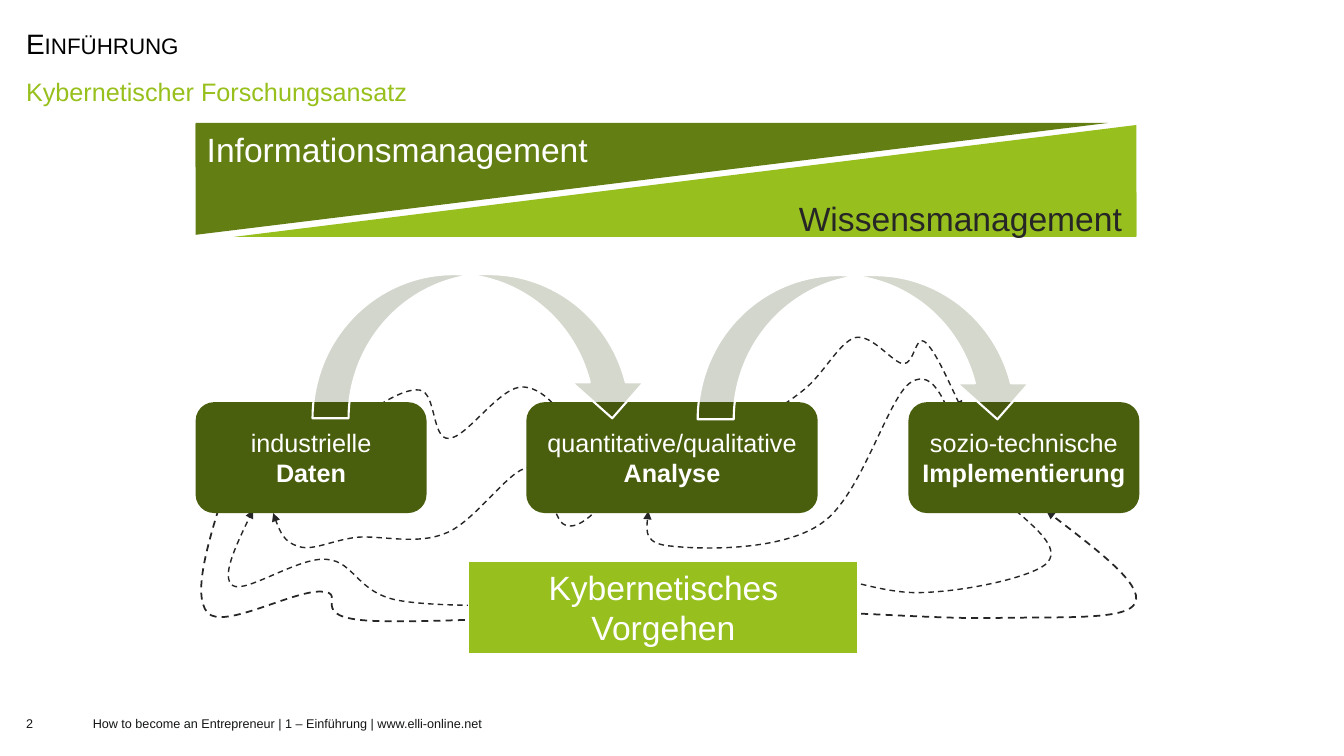
from lxml import etree
from pptx import Presentation
from pptx import util as u
from pptx.dml.color import RGBColor
from pptx.enum import dml, shapes, text
from pptx.oxml.ns import qn

HUE = {
    "white": "FFFFFF", "black": "000000", "foot": "141616", "ink": "262626",
    "lead": "98C01C", "lime": "97C01E", "olive": "637F13",
    "moss": "4A5F0E", "arc": "314009",
}
KIND = shapes.MSO_SHAPE
MID = text.MSO_ANCHOR.MIDDLE
TOP = text.MSO_ANCHOR.TOP
LEFT = text.PP_ALIGN.LEFT
CENTER = text.PP_ALIGN.CENTER

LOOPS = [
    (1.25, [(2.24, 4.82), (2.07, 5.36), (1.9, 5.9), (2.06, 6.08),
            (2.22, 6.25), (2.92, 5.85), (3.19, 5.87),
            (3.47, 5.88), (3.01, 6.13), (3.7, 6.16),
            (4.38, 6.19), (6.27, 6.06), (7.3, 6.06),
            (8.34, 6.05), (9.27, 6.15), (9.93, 6.13),
            (10.59, 6.12), (11.19, 6.15), (11.26, 5.98),
            (11.34, 5.8), (10.86, 5.44), (10.38, 5.07)]),
    (1, [(9.52, 4.38), (9.39, 4.02), (9.27, 3.65), (9.04, 3.79),
         (8.81, 3.92), (8.55, 4.92), (8.15, 5.19),
         (7.76, 5.47), (6.96, 5.45), (6.68, 5.42),
         (6.39, 5.4), (6.41, 5.24), (6.43, 5.07)]),
    (1, [(10.08, 5.07), (10.31, 5.27), (10.53, 5.46), (10.37, 5.6),
         (10.21, 5.73), (9.58, 5.87), (9.12, 5.88),
         (8.66, 5.89), (8.16, 5.63), (7.62, 5.65),
         (7.07, 5.66), (6.44, 5.91), (5.83, 5.96),
         (5.22, 6.01), (4.4, 6.03), (3.97, 5.96),
         (3.54, 5.89), (3.52, 5.57), (3.24, 5.55),
         (2.97, 5.52), (2.44, 5.89), (2.31, 5.81),
         (2.19, 5.73), (2.35, 5.39), (2.51, 5.06)]),
    (1, [(6.07, 4.9), (5.91, 5.08), (5.74, 5.26), (5.61, 5.21),
         (5.47, 5.17), (5.44, 4.62), (5.24, 4.64),
         (5.05, 4.65), (4.71, 5.18), (4.42, 5.29),
         (4.14, 5.41), (3.78, 5.31), (3.54, 5.33),
         (3.29, 5.36), (3.1, 5.47), (2.96, 5.42),
         (2.82, 5.38), (2.76, 5.24), (2.71, 5.09)]),
    (1, [(3.45, 4.23), (3.72, 4.04), (3.99, 3.85), (4.16, 3.87),
         (4.33, 3.89), (4.28, 4.36), (4.45, 4.35),
         (4.63, 4.35), (4.97, 3.81), (5.2, 3.84),
         (5.43, 3.86), (5.64, 4.19), (5.85, 4.51)]),
    (1, [(7.29, 4.31), (7.53, 4.17), (7.77, 4.03), (7.97, 3.87),
         (8.17, 3.71), (8.32, 3.4), (8.48, 3.35),
         (8.65, 3.31), (8.85, 3.6), (8.96, 3.61),
         (9.07, 3.61), (9.08, 3.32), (9.17, 3.39),
         (9.27, 3.47), (9.4, 3.77), (9.54, 4.06)]),
]


def rgb(hue):
    return RGBColor.from_string(HUE[hue])


def write(shape, lines, size, hue, align=CENTER, anchor=TOP,
          inset=(0.1, 0.05), wrap=True, lead=None):
    frame = shape.text_frame
    frame.word_wrap = wrap
    frame.vertical_anchor = anchor
    frame.margin_left = frame.margin_right = u.Inches(inset[0])
    frame.margin_top = frame.margin_bottom = u.Inches(inset[1])
    for i, line in enumerate(lines):
        para = frame.add_paragraph() if i else frame.paragraphs[0]
        para.text = line
        para.alignment = align
        if lead:
            para.line_spacing = lead
        font = para.font
        font.name, font.size, font.bold = "Arial", u.Pt(size), i > 0
        font.color.rgb = rgb(hue)


def label(slide, box, line, size, hue, **style):
    shape = slide.shapes.add_textbox(*map(u.Inches, box))
    write(shape, [line], size, hue, LEFT, **style)
    return shape


def block(slide, kind, box, fill, edge=0):
    shape = slide.shapes.add_shape(kind, *map(u.Inches, box))
    shape.shadow.inherit = False
    shape.fill.solid()
    shape.fill.fore_color.rgb = rgb(fill)
    if edge:
        shape.line.color.rgb = rgb("white")
        shape.line.width = u.Pt(edge)
    else:
        shape.line.fill.background()
    return shape


def header(slide, x, y):
    title = label(slide, (x, y, 9.37, 0.39), "Einführung", 20, "black",
                  anchor=MID, lead=1.1)
    run = title.text_frame.paragraphs[0].runs[0]
    run._r.get_or_add_rPr().set("cap", "small")
    label(slide, (x, y + 0.46, 13.02, 0.39), "Kybernetischer Forschungsansatz",
          18, "lead", lead=1.1)


def footer(slide, x, y):
    style = dict(anchor=MID, inset=(0, 0))
    label(slide, (x, y, 0.5, 0.38), "2", 9, "foot", **style)
    label(slide, (x + 0.66, y, 5.35, 0.38),
          "How to become an Entrepreneur | 1 – Einführung | www.elli-online.net",
          9, "foot", **style)


def wedges(slide, x, y):
    parts = [
        ("flipV", "olive", (x, y, 9.05, 1.11), (x, y + 0.01, 4, 0.43),
         "Informationsmanagement", "white", False),
        ("flipH", "lime", (x + 0.38, y + 0.02, 8.95, 1.11),
         (x + 5.84, y + 0.69, 3.49, 0.43), "Wissensmanagement", "ink", True),
    ]
    for flip, fill, wedge, box, line, hue, wrap in parts:
        shape = block(slide, KIND.RIGHT_TRIANGLE, wedge, fill)
        shape._element.spPr.find(qn("a:xfrm")).set(flip, "1")
        write(block(slide, KIND.RECTANGLE, box, fill), [line], 24, hue,
              wrap=wrap)


def loop(slide, width, points):
    spots = [(u.Inches(x), u.Inches(y)) for x, y in points]
    pen = slide.shapes.build_freeform(*spots[0], scale=1.0)
    pen.add_line_segments(spots[1:], close=False)
    shape = pen.convert_to_shape()
    shape.shadow.inherit = False
    shape.fill.background()
    shape.line.color.rgb = rgb("ink")
    shape.line.width = u.Pt(width)
    shape.line.dash_style = dml.MSO_LINE.DASH
    props = shape._element.spPr
    tip = etree.SubElement(props.find(qn("a:ln")), qn("a:tailEnd"))
    tip.set("type", "triangle")
    route = props.find(".//" + qn("a:path"))
    steps = route.findall(qn("a:lnTo"))
    for i in range(0, len(steps), 3):
        curve = etree.SubElement(route, qn("a:cubicBezTo"))
        for step in steps[i:i + 3]:
            curve.append(step[0])
            route.remove(step)


def stages(slide, x, y):
    cells = [
        (0, 2.29, 0.1, ["industrielle", "Daten"]),
        (3.28, 2.89, 0.1, ["quantitative/qualitative", "Analyse"]),
        (7.07, 2.29, 0.04, ["sozio-technische", "Implementierung"]),
    ]
    for dx, width, pad, lines in cells:
        shape = block(slide, KIND.ROUNDED_RECTANGLE,
                      (x + dx, y, width, 1.1), "moss")
        write(shape, lines, 18, "white", anchor=MID, inset=(pad, 0.05))
    for dx, dy in ((1.16, -1.27), (4.98, -1.26)):
        shape = block(slide, KIND.CURVED_DOWN_ARROW,
                      (x + dx, y + dy, 3.33, 1.43), "arc", 1.5)
        tint = shape._element.spPr.find(qn("a:solidFill"))[0]
        etree.SubElement(tint, qn("a:alpha")).set("val", "20000")


def method(slide, x, y):
    shape = block(slide, KIND.RECTANGLE, (x, y, 3.86, 0.91), "lime", 0.75)
    write(shape, ["Kybernetisches Vorgehen"], 24, "white")


def main():
    deck = Presentation()
    deck.slide_width, deck.slide_height = u.Inches(13.33), u.Inches(7.5)
    slide = deck.slides.add_slide(deck.slide_layouts[6])
    footer(slide, 0.26, 6.99)
    header(slide, 0.16, 0.22)
    wedges(slide, 1.94, 1.22)
    for width, points in LOOPS:
        loop(slide, width, points)
    method(slide, 4.65, 5.57)
    stages(slide, 1.94, 3.99)
    deck.save("out.pptx")


if __name__ == "__main__":
    main()
